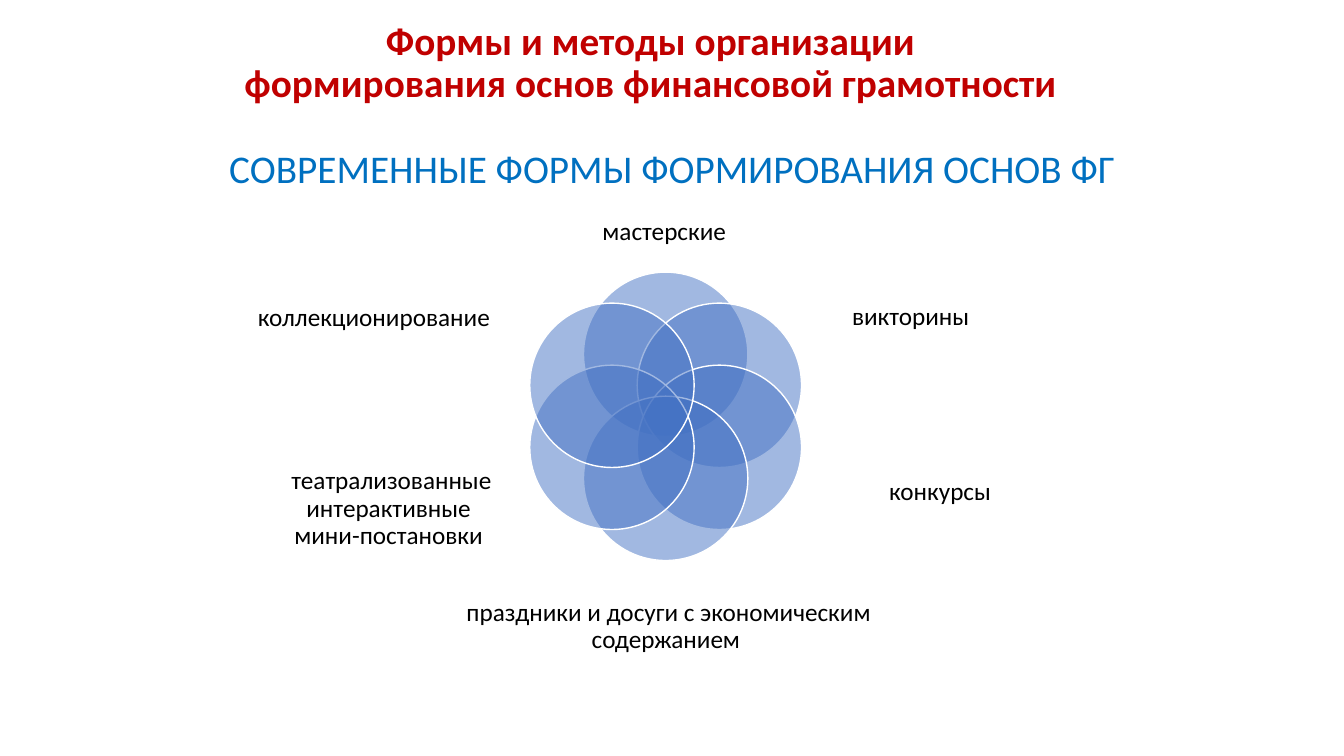
from dataclasses import dataclass
from math import cos, radians, sin

from lxml import etree
from pptx import Presentation
from pptx.dml.color import RGBColor
from pptx.enum.shapes import MSO_SHAPE
from pptx.enum.text import MSO_ANCHOR, MSO_AUTO_SIZE, PP_ALIGN
from pptx.oxml.ns import qn
from pptx.slide import Slide
from pptx.text.text import TextFrame
from pptx.util import Pt

OVAL = MSO_SHAPE.OVAL
MIDDLE = MSO_ANCHOR.MIDDLE
NO_AUTOFIT = MSO_AUTO_SIZE.NONE
CENTER = PP_ALIGN.CENTER

FONT = "Calibri"
WHITE = "FFFFFF"
BLACK = "000000"
PETAL_BLUE = "4472C4"
TITLE_BLUE = "0070C0"
HEADING_RED = "C00000"

FLOWER_X, FLOWER_Y = 475.5, 297.4
FLOWER_RADIUS = 44.3
PETAL_SIZE = 117.4


@dataclass(frozen=True)
class Form:
    label: str
    left: float
    top: float
    width: float
    height: float


FORMS = [
    Form("мастерские", 401, 126, 147, 80),
    Form("викторины", 581, 183, 139, 87),
    Form("конкурсы", 602, 302.4, 139, 98),
    Form(" праздники и досуги с экономическим содержанием", 326.2, 407.5, 298.8, 80),
    Form(" театрализованные интерактивные мини-постановки", 194.4, 314.6, 166.3, 98),
    Form("коллекционирование", 180.7, 178.6, 172.8, 98),
]


def color(value: str) -> RGBColor:
    return RGBColor.from_string(value)


def write(frame: TextFrame, lines: list[str], size: float, ink: str,
          bold: bool = False) -> None:
    frame.word_wrap = True
    frame.auto_size = NO_AUTOFIT
    frame.vertical_anchor = MIDDLE
    paragraph = frame.paragraphs[0]
    paragraph.alignment = CENTER
    paragraph.line_spacing = 0.9
    for number, line in enumerate(lines):
        if number:
            paragraph.add_line_break()
        run = paragraph.add_run()
        run.text = line
        run.font.name = FONT
        run.font.size = Pt(size)
        run.font.bold = bold
        run.font.color.rgb = color(ink)


def add_petal(slide: Slide, angle: float) -> None:
    left = FLOWER_X + FLOWER_RADIUS * sin(radians(angle)) - PETAL_SIZE / 2
    top = FLOWER_Y - FLOWER_RADIUS * cos(radians(angle)) - PETAL_SIZE / 2
    petal = slide.shapes.add_shape(
        OVAL, Pt(left), Pt(top), Pt(PETAL_SIZE), Pt(PETAL_SIZE))
    petal.shadow.inherit = False
    petal.fill.solid()
    petal.fill.fore_color.rgb = color(PETAL_BLUE)
    fill_color = petal.fill._xPr.find(qn("a:solidFill")).find(qn("a:srgbClr"))
    etree.SubElement(fill_color, qn("a:alpha"), val="50000")
    petal.line.color.rgb = color(WHITE)
    petal.line.width = Pt(1)


def add_label(slide: Slide, form: Form) -> None:
    frame = slide.shapes.add_textbox(
        Pt(form.left), Pt(form.top), Pt(form.width), Pt(form.height)).text_frame
    frame.margin_left = frame.margin_right = Pt(0)
    frame.margin_top = frame.margin_bottom = Pt(0)
    write(frame, [form.label], 18, BLACK)


def main() -> None:
    presentation = Presentation()
    presentation.slide_width = Pt(960)
    presentation.slide_height = Pt(540)
    slide = presentation.slides.add_slide(presentation.slide_layouts[5])

    title = slide.shapes.title
    title.left, title.top = Pt(91.4), Pt(87.1)
    title.width, title.height = Pt(776.9), Pt(69.1)
    title.fill.solid()
    title.fill.fore_color.rgb = color(WHITE)
    write(title.text_frame, ["СОВРЕМЕННЫЕ ФОРМЫ ФОРМИРОВАНИЯ ОСНОВ ФГ"],
          28, TITLE_BLUE)

    heading = slide.shapes.add_textbox(Pt(34.6), Pt(28.8), Pt(859.7), Pt(33.8))
    write(heading.text_frame,
          ["Формы и методы организации",
           "формирования основ финансовой грамотности"],
          28, HEADING_RED, bold=True)

    for position, form in enumerate(FORMS):
        add_petal(slide, position * 360 / len(FORMS))
        add_label(slide, form)

    presentation.save("out.pptx")


if __name__ == "__main__":
    main()
